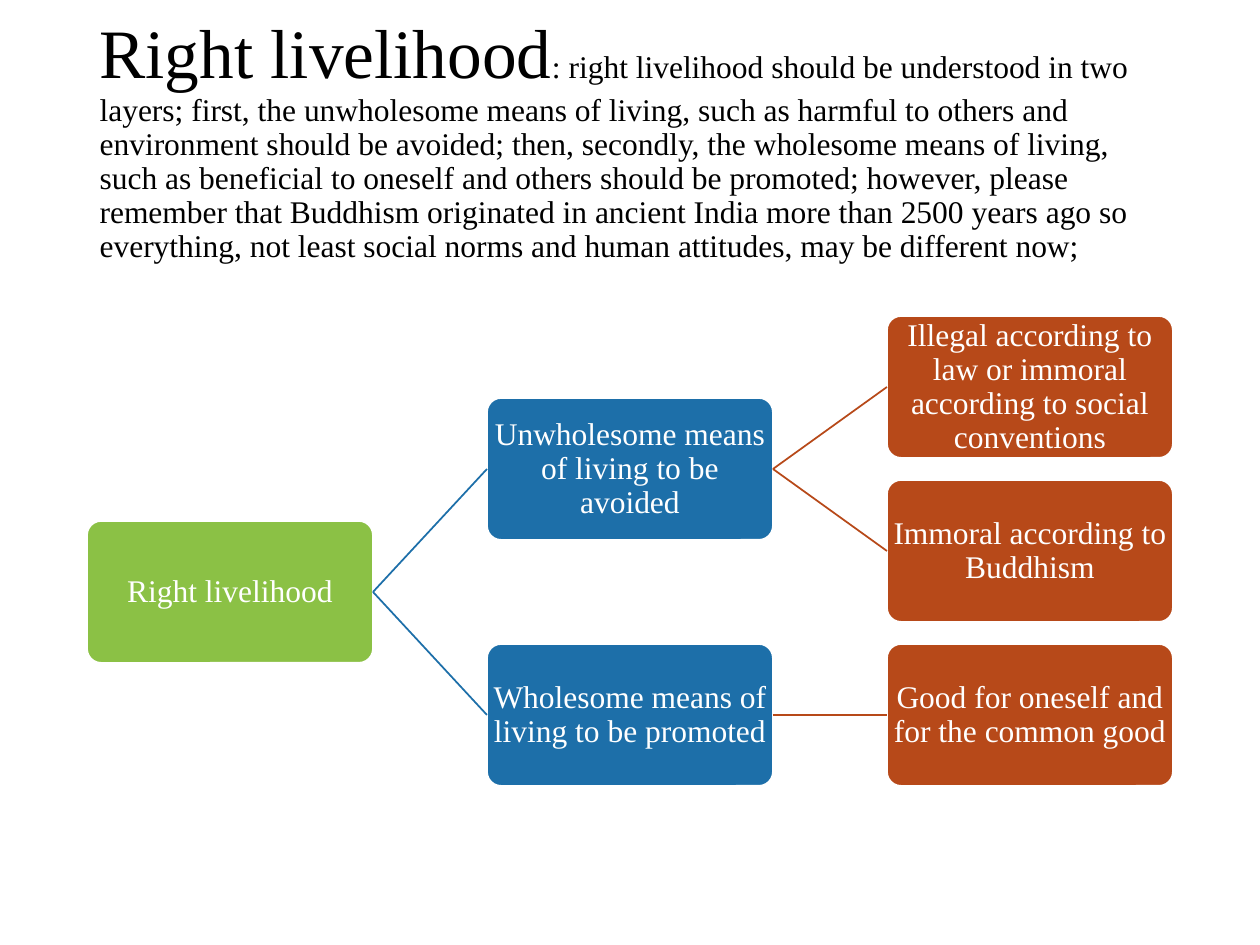
import dataclasses

import lxml.etree
import pptx
import pptx.dml.color
import pptx.enum.shapes
import pptx.enum.text
import pptx.oxml.ns
import pptx.util

PX = pptx.util.Inches(1) // 126  # one scale: px to EMU
TITLE_BOX = (87, 50, 1086, 183)
LEFT, TOP = 87, 316
BOX_W, BOX_H = 286, 142
COL_STEP, ROW_STEP = 400, 164

HEADING = "Right livelihood"
EXPLANATION = (
    ": right livelihood should be understood in two layers; first, the "
    "unwholesome means of living, such as harmful to others and environment "
    "should be avoided; then, secondly, the wholesome means of living, such as "
    "beneficial to oneself and others should be promoted; however, please "
    "remember that Buddhism originated in ancient India more than 2500 years "
    "ago so everything, not least social norms and human attitudes, may be "
    "different now;"
)
# Each node is (text, children)
TREE = ("Right livelihood", [
    ("Unwholesome means of living to be avoided", [
        ("Illegal according to law or immoral according to social conventions", []),
        ("Immoral according to Buddhism", []),
    ]),
    ("Wholesome means of living to be promoted", [
        ("Good for oneself and for the common good", []),
    ]),
])


@dataclasses.dataclass(frozen=True)
class Theme:
    font: str = "Times New Roman"
    heading_size: float = 39.6
    text_size: float = 18
    line_width: float = 1
    line_spacing: float = 0.9
    dark: str = "000000"
    light: str = "FFFFFF"
    levels: tuple = ("8BC145", "1D6FA9", "B74919")


THEME = Theme()


def px(*lengths):
    return [round(length * PX) for length in lengths]


def rgb(color):
    return pptx.dml.color.RGBColor.from_string(color)


def format_run(r, size, color):
    r.font.name = THEME.font
    r.font.size = pptx.util.Pt(size)
    r.font.color.rgb = rgb(color)


def set_line(s, color):
    s.line.color.rgb = rgb(color)
    s.line.width = pptx.util.Pt(THEME.line_width)


def add_title(slide):
    s = slide.shapes.title
    s.left, s.top, s.width, s.height = px(*TITLE_BOX)
    tf = s.text_frame
    tf.word_wrap = True
    tf.auto_size = pptx.enum.text.MSO_AUTO_SIZE.NONE
    tf.vertical_anchor = pptx.enum.text.MSO_ANCHOR.MIDDLE
    p = tf.paragraphs[0]
    p.alignment = pptx.enum.text.PP_ALIGN.LEFT
    p.line_spacing = THEME.line_spacing
    for text, size in ((HEADING, THEME.heading_size), (EXPLANATION, THEME.text_size)):
        r = p.add_run()
        r.text = text
        format_run(r, size, THEME.dark)


def add_box(slide, text, level, top):
    s = slide.shapes.add_shape(
        pptx.enum.shapes.MSO_SHAPE.ROUNDED_RECTANGLE,
        *px(LEFT + level * COL_STEP, top, BOX_W, BOX_H))
    s.adjustments[0] = 0.1
    s.shadow.inherit = False
    s.fill.solid()
    s.fill.fore_color.rgb = rgb(THEME.levels[level])
    set_line(s, THEME.light)
    tf = s.text_frame
    tf.text = text
    tf.word_wrap = True
    tf.vertical_anchor = pptx.enum.text.MSO_ANCHOR.MIDDLE
    tf.margin_left, tf.margin_top, tf.margin_right, tf.margin_bottom = px(1, 1, 1, 1)
    p = tf.paragraphs[0]
    p.alignment = pptx.enum.text.PP_ALIGN.CENTER
    p.line_spacing = THEME.line_spacing
    format_run(p.runs[0], THEME.text_size, THEME.light)
    return s


def add_link(slide, parent, child, level):
    s = slide.shapes.add_connector(
        pptx.enum.shapes.MSO_CONNECTOR.STRAIGHT, 0, 0, 0, 0)
    s.begin_connect(parent, 3)
    s.end_connect(child, 1)
    set_line(s, THEME.levels[level])
    lxml.etree.SubElement(s._element.spPr, pptx.oxml.ns.qn("a:effectLst"))


def add_tree(slide, node, level=0, row=0):
    """Draw a node and its branches; return its box, top and next free row."""
    text, children = node
    branches = []
    next_row = row
    for child in children:
        box, top, next_row = add_tree(slide, child, level + 1, next_row)
        branches.append((box, top))
    if branches:  # a parent is centred on its children
        top = (branches[0][1] + branches[-1][1]) / 2
    else:
        top = TOP + row * ROW_STEP
        next_row = row + 1
    s = add_box(slide, text, level, top)
    for box, _ in branches:
        add_link(slide, s, box, level + 1)
    return s, top, next_row


def main():
    prs = pptx.Presentation()
    prs.slide_width, prs.slide_height = px(1260, 945)
    slide = prs.slides.add_slide(prs.slide_layouts[5])  # title only
    add_title(slide)
    add_tree(slide, TREE)
    prs.save("out.pptx")


if __name__ == "__main__":
    main()
